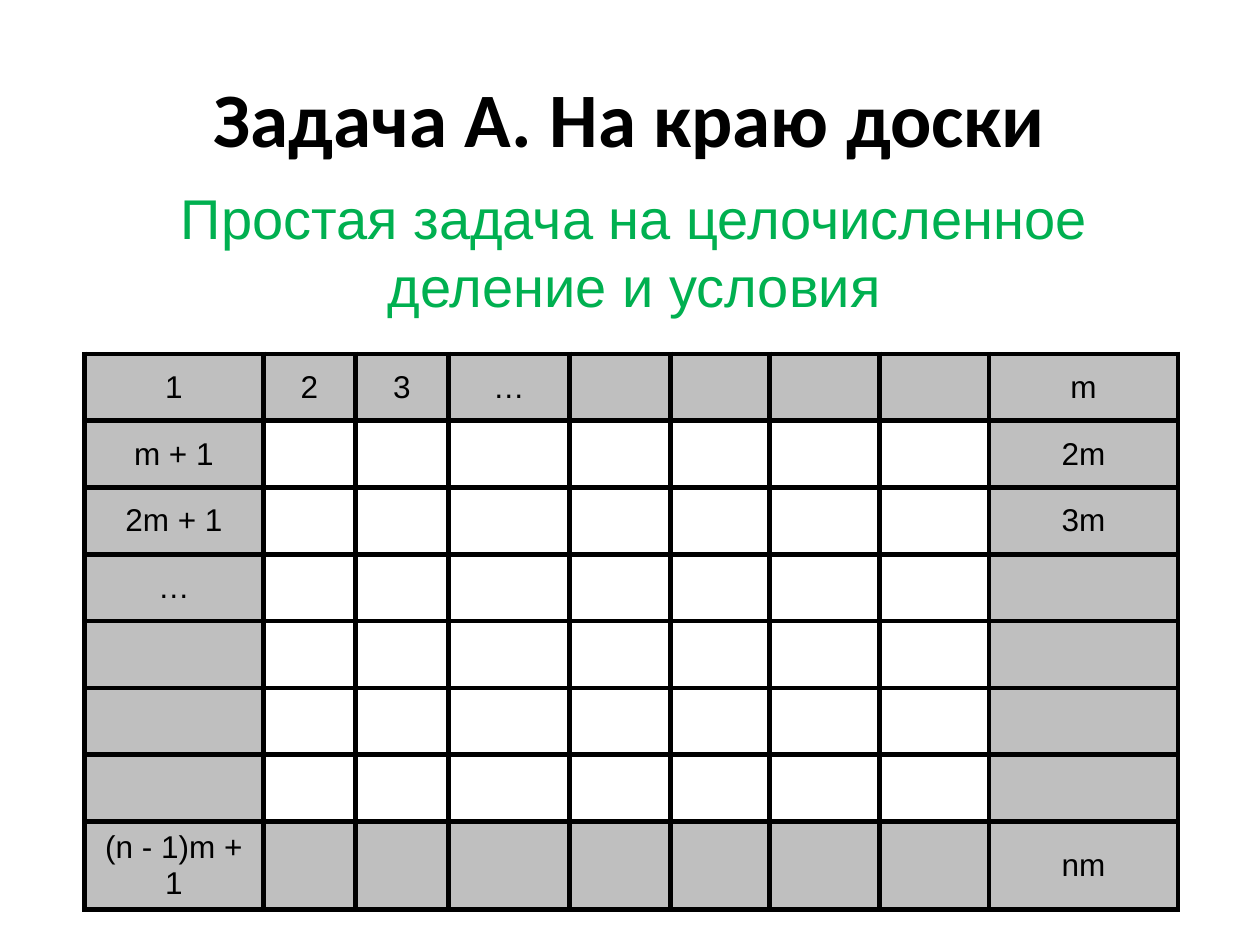
import pptx
import pptx.dml.color
import pptx.enum.text
import pptx.oxml
import pptx.oxml.ns
import pptx.util
from pptx.util import Inches

COLORS = {"ink": "000000", "green": "00B050", "edge": "BFBFBF", "inner": "FFFFFF"}
COLUMN_WIDTHS = [1.42, 0.73, 0.74, 0.96, 0.8, 0.79, 0.87, 0.87, 1.5]
ROW_COUNT = 8
ROW_HEIGHT = 0.53
LABELS = {
    (0, 0): "1", (0, 1): "2", (0, 2): "3", (0, 3): "…", (0, 8): "m",
    (1, 0): "m + 1", (1, 8): "2m",
    (2, 0): "2m + 1", (2, 8): "3m",
    (3, 0): "…",
    (7, 0): "(n - 1)m + 1", (7, 8): "nm",
}


def rgb(name):
    return pptx.dml.color.RGBColor.from_string(COLORS[name])


class SlideBuilder:
    """Holds the shared style and the slide being filled."""

    body_font = "Arial"
    cell_size = 18
    border_width = 3

    def __init__(self, slide):
        self.slide = slide

    def style_paragraph(self, para, size, color, font, bold=False):
        para.alignment = pptx.enum.text.PP_ALIGN.CENTER
        for span in para.runs:
            span.font.name = font
            span.font.size = pptx.util.Pt(size)
            span.font.bold = bold
            span.font.color.rgb = rgb(color)

    def add_text(self, text, left, top, width, height, size, color,
                 font=body_font, bold=False, anchor=pptx.enum.text.MSO_ANCHOR.TOP):
        box = self.slide.shapes.add_textbox(
            Inches(left), Inches(top), Inches(width), Inches(height))
        frame = box.text_frame
        frame.word_wrap = True
        frame.vertical_anchor = anchor
        frame.text = text
        self.style_paragraph(frame.paragraphs[0], size, color, font, bold)

    def add_borders(self, cell):
        """Draw all four borders; they must precede the fill in the cell XML."""
        properties = cell._tc.get_or_add_tcPr()
        for index, side in enumerate("LRTB"):
            border = pptx.oxml.parse_xml(
                f'<a:ln{side} {pptx.oxml.ns.nsdecls("a")} '
                f'w="{pptx.util.Pt(self.border_width)}"><a:solidFill>'
                f'<a:srgbClr val="{COLORS["ink"]}"/></a:solidFill></a:ln{side}>')
            properties.insert(index, border)

    def add_board(self, left, top):
        """Add the numbered board with its outermost cells shaded."""
        column_count = len(COLUMN_WIDTHS)
        table = self.slide.shapes.add_table(
            ROW_COUNT, column_count, Inches(left), Inches(top),
            Inches(sum(COLUMN_WIDTHS)), Inches(ROW_COUNT * ROW_HEIGHT)).table
        table.first_row = False
        table.horz_banding = False
        for column, width in zip(table.columns, COLUMN_WIDTHS):
            column.width = Inches(width)
        for row_index, row in enumerate(table.rows):
            row.height = Inches(ROW_HEIGHT)
            for column_index, cell in enumerate(row.cells):
                on_edge = (row_index in (0, ROW_COUNT - 1)
                           or column_index in (0, column_count - 1))
                cell.fill.solid()
                cell.fill.fore_color.rgb = rgb("edge" if on_edge else "inner")
                cell.vertical_anchor = pptx.enum.text.MSO_ANCHOR.MIDDLE
                cell.text_frame.text = LABELS.get((row_index, column_index), "")
                self.style_paragraph(cell.text_frame.paragraphs[0],
                                     self.cell_size, "ink", self.body_font)
                self.add_borders(cell)


def main():
    deck = pptx.Presentation()
    deck.slide_width = Inches(10)
    deck.slide_height = Inches(7.5)
    builder = SlideBuilder(deck.slides.add_slide(deck.slide_layouts[6]))
    builder.add_text("Задача A. На краю доски", 0.5, 0.3, 9, 1.25, 44, "ink",
                     font="Calibri", bold=True,
                     anchor=pptx.enum.text.MSO_ANCHOR.MIDDLE)
    builder.add_text("Простая задача на целочисленное деление и условия",
                     1.09, 1.41, 7.89, 1.18, 32, "green")
    builder.add_board(0.67, 2.81)
    deck.save("out.pptx")


if __name__ == "__main__":
    main()
